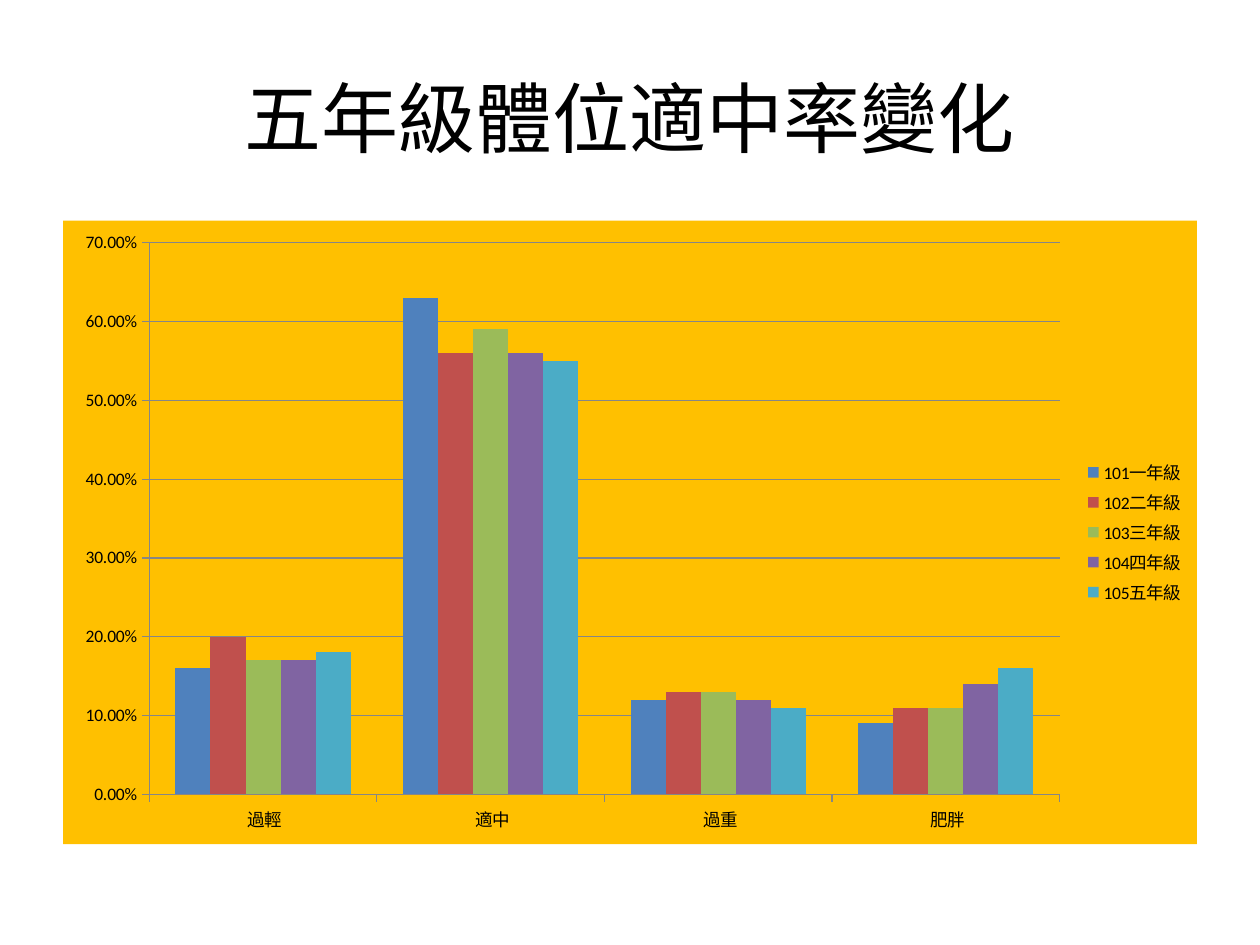
from lxml import etree
from pptx import Presentation
from pptx.chart.data import CategoryChartData
from pptx.dml.color import RGBColor
from pptx.enum import chart as ch, text
from pptx.util import Inches, Pt

COLORS = {
    "text": "000000",
    "axis": "868686",
    "background": "FFC000",
    "101一年級": "4F81BD",
    "102二年級": "C0504D",
    "103三年級": "9BBB59",
    "104四年級": "8064A2",
    "105五年級": "4BACC6",
}
FONT = "Calibri"
# Each label starts with a no-break space
WEIGHT_CLASSES = [" 過輕", " 適中", " 過重", " 肥胖"]
RATES = {
    "101一年級": (0.16, 0.63, 0.12, 0.09),
    "102二年級": (0.20, 0.56, 0.13, 0.11),
    "103三年級": (0.17, 0.59, 0.13, 0.11),
    "104四年級": (0.17, 0.56, 0.12, 0.14),
    "105五年級": (0.18, 0.55, 0.11, 0.16),
}


def rgb(name):
    return RGBColor.from_string(COLORS[name])


prs = Presentation()
prs.slide_width, prs.slide_height = Inches(10), Inches(7.5)
slide = prs.slides.add_slide(prs.slide_layouts[6])

# Title
title = slide.shapes.add_textbox(Inches(0.5), Inches(0.3), Inches(9), Inches(1.25))
frame = title.text_frame
frame.word_wrap = True
frame.vertical_anchor = text.MSO_ANCHOR.MIDDLE
heading = frame.paragraphs[0]
heading.alignment = text.PP_ALIGN.CENTER
run = heading.add_run()
run.text = "五年級體位適中率變化"
run.font.size = Pt(44)
run.font.name = FONT
run.font.color.rgb = rgb("text")

# Rates by weight class and school year
data = CategoryChartData(number_format="0.00%")
data.categories = WEIGHT_CLASSES
for year, values in RATES.items():
    data.add_series(year, values)
chart = slide.shapes.add_chart(
    ch.XL_CHART_TYPE.COLUMN_CLUSTERED,
    Inches(0.5), Inches(1.75), Inches(9), Inches(4.95), data,
).chart
chart.has_title = False
chart.font.size = Pt(10)
chart.font.name = FONT
chart.font.color.rgb = rgb("text")

plot = chart.plots[0]
plot.gap_width = 150
plot.overlap = 0
plot.vary_by_categories = False
for series in plot.series:
    series.format.fill.solid()
    series.format.fill.fore_color.rgb = rgb(series.name)
    series.invert_if_negative = False

rate_axis = chart.value_axis
rate_axis.minimum_scale, rate_axis.maximum_scale, rate_axis.major_unit = 0, 0.7, 0.1
rate_axis.has_major_gridlines = True
rate_axis.tick_labels.number_format = "0.00%"
rate_axis.tick_labels.number_format_is_linked = False
for axis in (chart.category_axis, rate_axis):
    axis.major_tick_mark = ch.XL_TICK_MARK.OUTSIDE
for part in (chart.category_axis, rate_axis, rate_axis.major_gridlines):
    part.format.line.color.rgb = rgb("axis")
    part.format.line.width = Pt(0.75)

chart.has_legend = True
chart.legend.position = ch.XL_LEGEND_POSITION.RIGHT
chart.legend.include_in_layout = False

# Chart area fill, which must follow c:chart
area = etree.fromstring(
    '<c:spPr xmlns:c="http://schemas.openxmlformats.org/drawingml/2006/chart" '
    'xmlns:a="http://schemas.openxmlformats.org/drawingml/2006/main">'
    f'<a:solidFill><a:srgbClr val="{COLORS["background"]}"/></a:solidFill>'
    "<a:ln><a:noFill/></a:ln></c:spPr>"
)
chart.element.chart.addnext(area)

prs.save("out.pptx")
